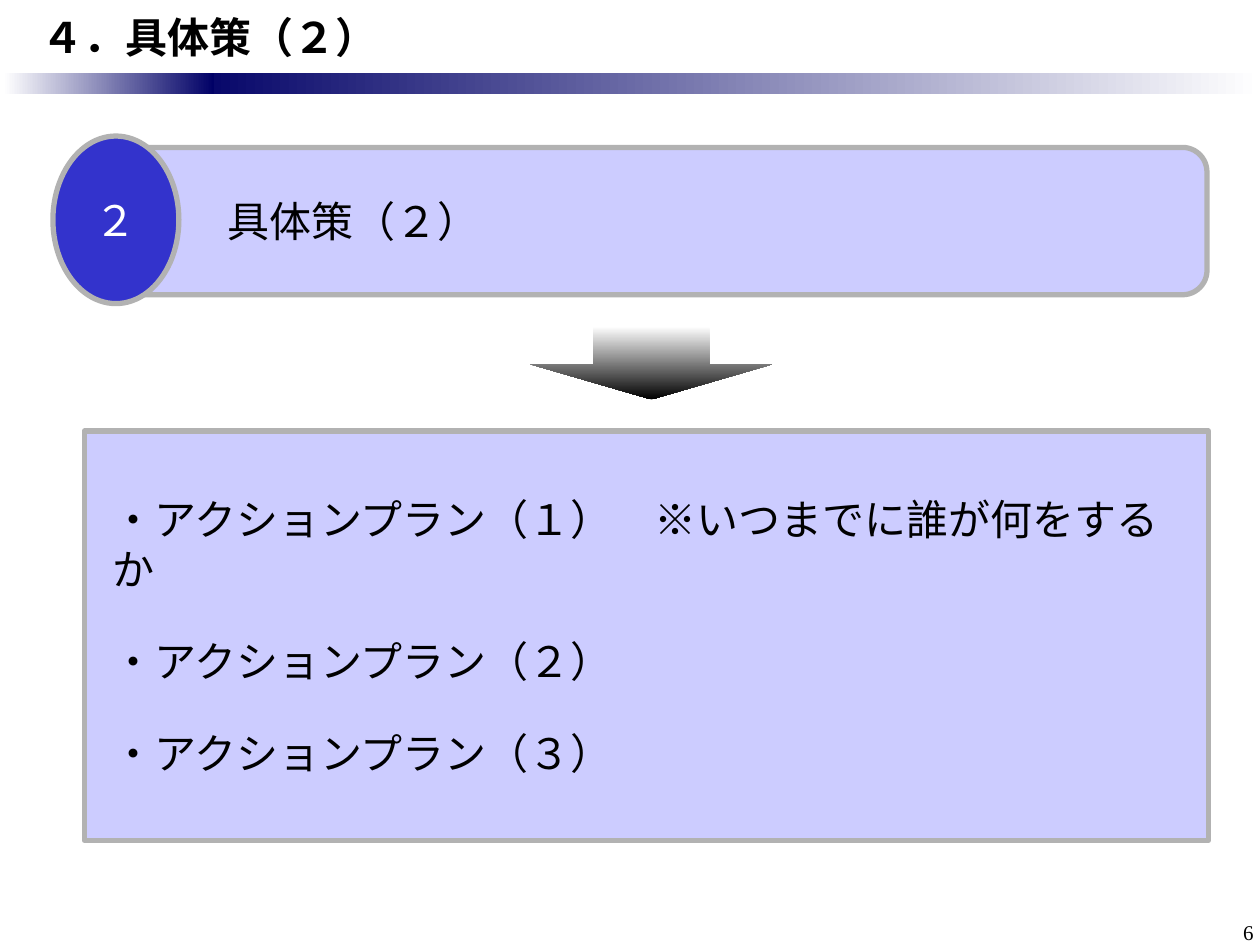
from pptx import Presentation
from pptx.dml.color import RGBColor
from pptx.enum.shapes import MSO_SHAPE
from pptx.enum.text import MSO_ANCHOR, MSO_AUTO_SIZE, PP_ALIGN
from pptx.oxml.ns import qn
from pptx.util import Inches, Pt

JAPANESE_FONT = "Noto Sans CJK JP"
NAVY, BLUE, LAVENDER, GREY = "000066", "3333CC", "CCCCFF", "B2B2B2"
WHITE, BLACK = "FFFFFF", "000000"
ACTION_PLANS = [
    "・アクションプラン（１）　※いつまでに誰が何をするか",
    "・アクションプラン（２）",
    "・アクションプラン（３）",
]


def color(hex_value):
    return RGBColor.from_string(hex_value)


def add_run(paragraph, text, size=24, font=JAPANESE_FONT, font_color=BLACK, bold=False):
    run = paragraph.add_run()
    run.text = text
    run.font.size = Pt(size)
    run.font.name = font
    run.font.bold = bold
    run.font.color.rgb = color(font_color)
    properties = run.font._element
    east_asian = properties.makeelement(qn("a:ea"), {"typeface": font})
    properties.find(qn("a:latin")).addnext(east_asian)


def set_frame(frame, left=0.1, right=0.1, anchor=MSO_ANCHOR.MIDDLE):
    frame.word_wrap = True
    frame.auto_size = MSO_AUTO_SIZE.NONE
    frame.vertical_anchor = anchor
    frame.margin_left, frame.margin_right = Inches(left), Inches(right)
    frame.margin_top = frame.margin_bottom = Inches(0.05)


def add_shape(slide, kind, left, top, width, height):
    shape = slide.shapes.add_shape(
        kind, Inches(left), Inches(top), Inches(width), Inches(height))
    shape.shadow.inherit = False
    return shape


def add_gradient_shape(slide, kind, box, start, end):
    shape = add_shape(slide, kind, *box)
    shape.line.fill.background()
    shape.fill.gradient()
    shape.fill.gradient_angle = 0
    for stop, position, hex_value in zip(shape.fill.gradient_stops, (0, 1), (start, end)):
        stop.position = position
        stop.color.rgb = color(hex_value)
    return shape


def add_panel(slide, kind, box, fill, lines, inset=0.1,
              font_color=WHITE, alignment=PP_ALIGN.LEFT):
    """Add a grey-outlined shape holding one paragraph per line."""
    shape = add_shape(slide, kind, *box)
    shape.fill.solid()
    shape.fill.fore_color.rgb = color(fill)
    shape.line.color.rgb = color(GREY)
    shape.line.width = Pt(3)
    frame = shape.text_frame
    set_frame(frame, left=inset)
    for index, line in enumerate(lines):
        paragraph = frame.add_paragraph() if index else frame.paragraphs[0]
        paragraph.alignment = alignment
        if index:
            paragraph.space_before = Pt(24)
        paragraph.line_spacing = Pt(28.5)
        add_run(paragraph, line, font_color=font_color)
    return shape


def set_title(slide, text):
    title = slide.shapes.title
    title.left, title.top = Inches(0), Inches(0)
    title.width, title.height = Inches(10), Inches(0.58)
    set_frame(title.text_frame, left=0.33)
    paragraph = title.text_frame.paragraphs[0]
    paragraph.alignment = PP_ALIGN.LEFT
    add_run(paragraph, text, bold=True)


def add_page_number(slide, number):
    text_box = slide.shapes.add_textbox(
        Inches(9.42), Inches(7.25), Inches(0.58), Inches(0.25))
    set_frame(text_box.text_frame, right=0.05, anchor=MSO_ANCHOR.TOP)
    paragraph = text_box.text_frame.paragraphs[0]
    paragraph.alignment = PP_ALIGN.RIGHT
    add_run(paragraph, number, size=12, font="Times New Roman")


def main():
    presentation = Presentation()
    presentation.slide_width, presentation.slide_height = Inches(10), Inches(7.5)
    slide = presentation.slides.add_slide(presentation.slide_layouts[5])

    add_gradient_shape(slide, MSO_SHAPE.RECTANGLE, (1.42, 0.58, 8.58, 0.17), NAVY, WHITE)
    add_gradient_shape(slide, MSO_SHAPE.RECTANGLE, (0.03, 0.58, 1.67, 0.17), WHITE, NAVY)
    add_page_number(slide, "6")
    set_title(slide, "４．具体策（２）")

    add_panel(slide, MSO_SHAPE.ROUNDED_RECTANGLE, (0.75, 1.17, 8.83, 1.17), LAVENDER,
              ["具体策（２）"], inset=1, font_color=BLACK)
    add_panel(slide, MSO_SHAPE.OVAL, (0.42, 1.08, 1, 1.33), BLUE,
              ["２"], alignment=PP_ALIGN.CENTER)

    arrow = add_gradient_shape(
        slide, MSO_SHAPE.RIGHT_ARROW, (4.88, 1.92, 0.58, 1.92), WHITE, BLACK)
    arrow.rotation = 90
    arrow.adjustments[0], arrow.adjustments[1] = 0.48, 0.48

    add_panel(slide, MSO_SHAPE.RECTANGLE, (0.67, 3.42, 8.92, 3.25), LAVENDER,
              ACTION_PLANS, inset=0.22, font_color=BLACK)

    presentation.save("out.pptx")


if __name__ == "__main__":
    main()
